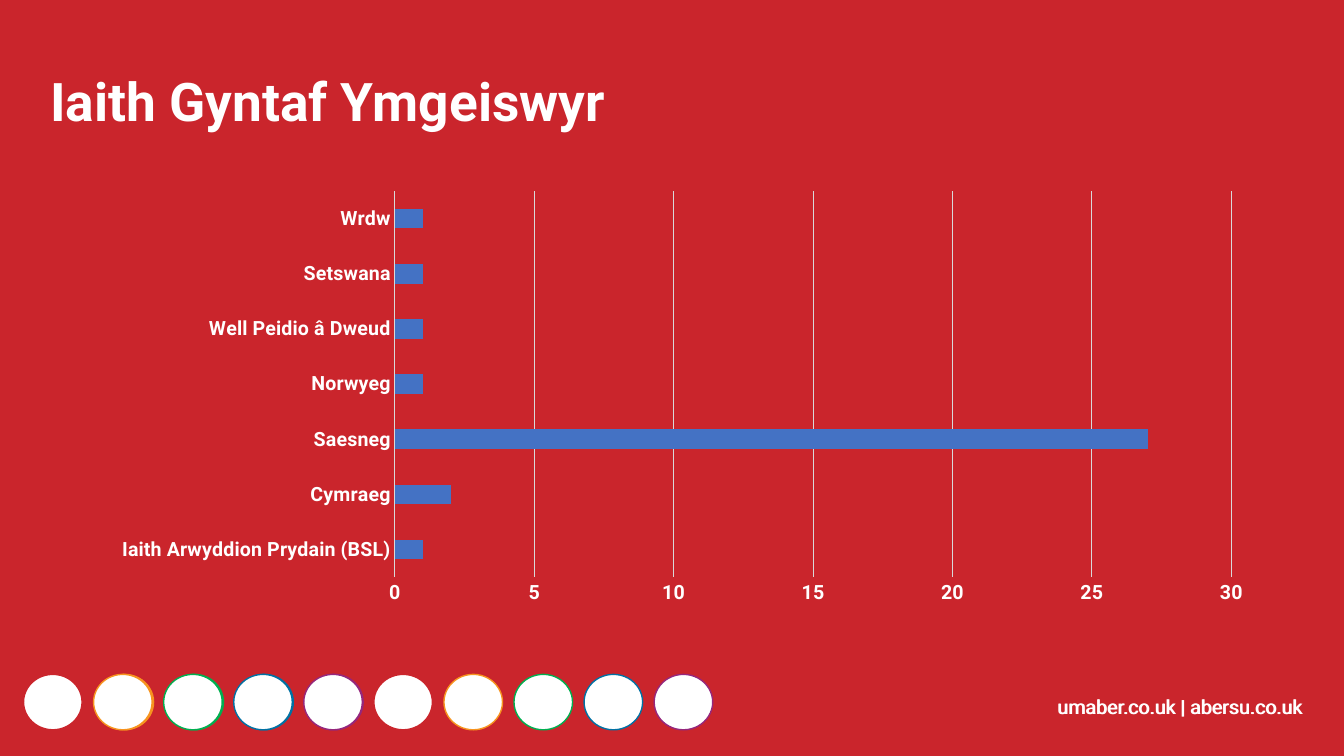
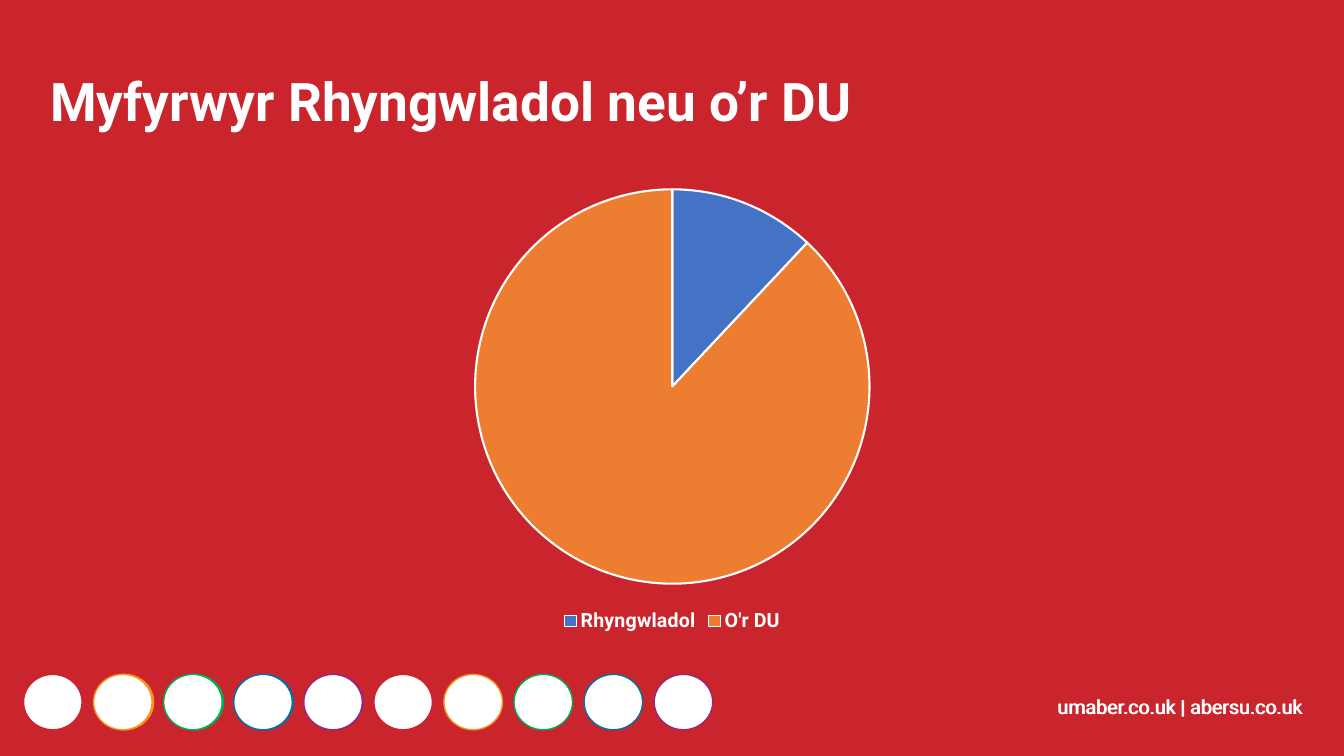
"""Build two red slides with charts on students' first language and origin."""
import dataclasses
import typing

import pptx
import pptx.chart.data
import pptx.dml.color
import pptx.enum.chart
import pptx.enum.shapes
import pptx.util

Pt = pptx.util.Pt
Kind = pptx.enum.chart.XL_CHART_TYPE
FONT = "Roboto"
HEX = {
    "red": "CA252C",
    "amber": "F7941F",
    "green": "00AF50",
    "teal": "0171A3",
    "plum": "95277D",
    "white": "FFFFFF",
    "grid": "D9D9D9",
    "blue": "4472C4",
    "orange": "ED7D31",
}
RINGS = ("red", "amber", "green", "teal", "plum")


@dataclasses.dataclass(frozen=True)
class Box:
    left: float
    top: float
    width: float
    height: float

    def lengths(self) -> tuple:
        return tuple(Pt(n) for n in (self.left, self.top, self.width, self.height))


@dataclasses.dataclass(frozen=True)
class Page:
    title: str
    kind: Kind
    box: Box
    data: dict[str, int]
    style: typing.Callable


def tint(name: str) -> pptx.dml.color.RGBColor:
    return pptx.dml.color.RGBColor.from_string(HEX[name])


def paint(fill, name: str) -> None:
    fill.solid()
    fill.fore_color.rgb = tint(name)


def stroke(line, name: str, width: float) -> None:
    paint(line.fill, name)
    line.width = Pt(width)


def set_font(font, size: float, bold: bool) -> None:
    font.name = FONT
    font.size = Pt(size)
    font.bold = bold
    font.color.rgb = tint("white")


def add_text(slide, box: Box, text: str, size: float, bold: bool = False, space: float = 1.0) -> None:
    frame = slide.shapes.add_textbox(*box.lengths()).text_frame
    frame.word_wrap = True
    frame.text = text
    line = frame.paragraphs[0]
    line.line_spacing = space
    set_font(line.runs[0].font, size, bold)


def add_disc(slide, left: float, fill: str, ring: str) -> None:
    box = Box(left, 481.7, 41.8, 39.6)
    disc = slide.shapes.add_shape(pptx.enum.shapes.MSO_SHAPE.OVAL, *box.lengths())
    disc.shadow.inherit = False
    paint(disc.fill, fill)
    stroke(disc.line, ring, 1)


def add_foot(slide) -> None:
    for left in (748.1, 748.8):
        add_text(slide, Box(left, 492.5, 201.6, 24.5), "umaber.co.uk | abersu.co.uk", 14)
    for i, ring in enumerate(RINGS):
        add_disc(slide, 18 + 49.9 * i, ring, ring)
    for i, ring in enumerate(RINGS * 2):
        add_disc(slide, 16.8 + 50.05 * i, "white", ring)


def style_bars(chart) -> None:
    none = pptx.enum.chart.XL_TICK_MARK.NONE
    plot = chart.plots[0]
    plot.gap_width = 182
    plot.vary_by_categories = False
    paint(plot.series[0].format.fill, "blue")
    chart.has_legend = False
    for axis in (chart.category_axis, chart.value_axis):
        axis.major_tick_mark = axis.minor_tick_mark = none
        set_font(axis.tick_labels.font, 14, True)
    stroke(chart.category_axis.format.line, "grid", 0.75)
    scale = chart.value_axis
    scale.minimum_scale, scale.maximum_scale, scale.major_unit = 0, 30, 5
    scale.format.line.fill.background()
    scale.has_major_gridlines = True
    stroke(scale.major_gridlines.format.line, "grid", 0.75)


def style_pie(chart) -> None:
    plot = chart.plots[0]
    plot.vary_by_categories = True
    for i, name in enumerate(("blue", "orange")):
        slice_form = plot.series[0].points[i].format
        paint(slice_form.fill, name)
        stroke(slice_form.line, "white", 1.5)
    chart.has_legend = True
    chart.legend.position = pptx.enum.chart.XL_LEGEND_POSITION.BOTTOM
    chart.legend.include_in_layout = False
    set_font(chart.legend.font, 14, True)


def add_chart(slide, page: Page) -> None:
    data = pptx.chart.data.CategoryChartData()
    data.categories = list(page.data)
    data.add_series("Series 1", list(page.data.values()))
    chart = slide.shapes.add_chart(page.kind, *page.box.lengths(), data).chart
    chart.has_title = False
    set_font(chart.font, 14, True)
    page.style(chart)


PAGES = (
    Page(
        "Iaith Gyntaf Ymgeiswyr",
        Kind.BAR_CLUSTERED,
        Box(70.6, 130.3, 833.8, 308.2),
        {
            "Iaith Arwyddion Prydain (BSL)": 1,
            "Cymraeg": 2,
            "Saesneg": 27,
            "Norwyeg": 1,
            "Well Peidio â Dweud": 1,
            "Setswana": 1,
            "Wrdw": 1,
        },
        style_bars,
    ),
    Page(
        "Myfyrwyr Rhyngwladol neu o’r DU",
        Kind.PIE,
        Box(118.1, 125.3, 724.3, 329.8),
        {"Rhyngwladol": 12, "O'r DU": 88},
        style_pie,
    ),
)


def main() -> None:
    deck = pptx.Presentation()
    deck.slide_width, deck.slide_height = Pt(960), Pt(540)
    for page in PAGES:
        slide = deck.slides.add_slide(deck.slide_layouts[6])
        paint(slide.background.fill, "red")
        add_foot(slide)
        add_text(slide, Box(28.8, 50.4, 822.2, 63.4), page.title, 38, True, 0.9)
        add_chart(slide, page)
    deck.save("out.pptx")


if __name__ == "__main__":
    main()
